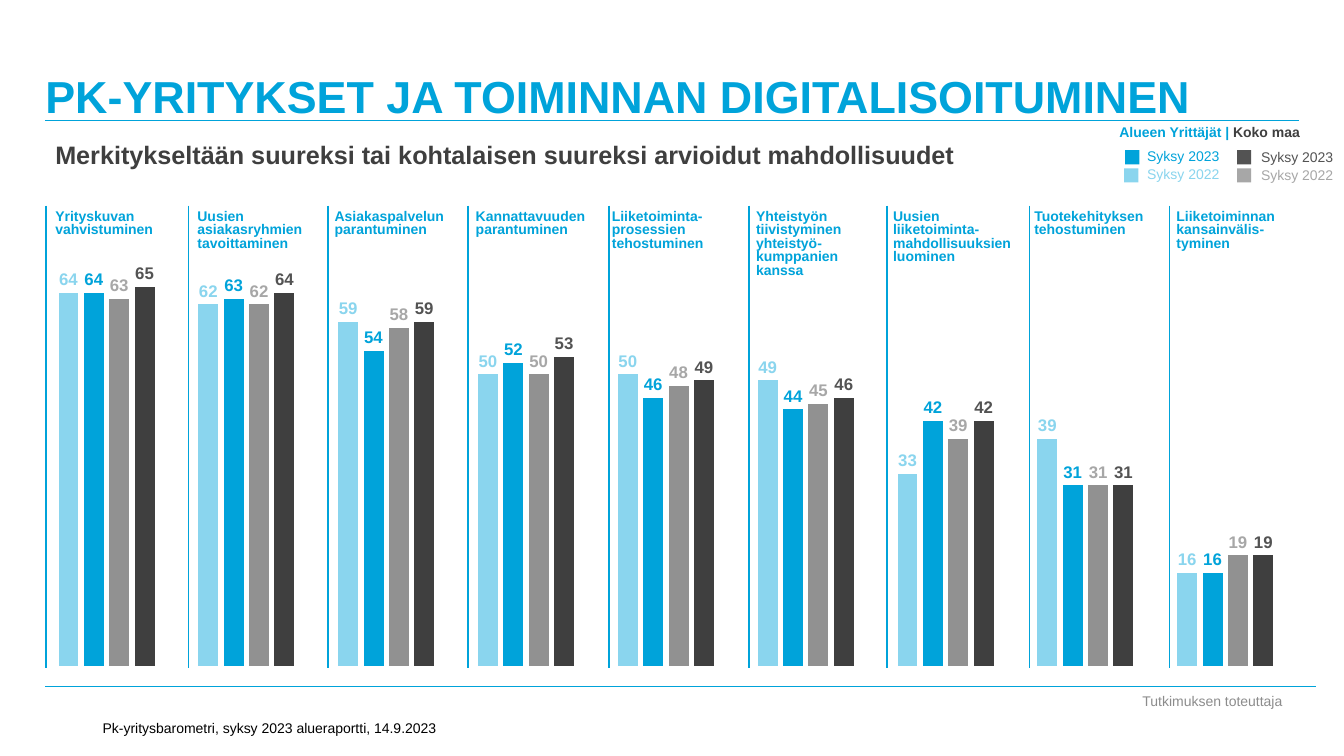
from pptx import Presentation
from pptx.chart.data import CategoryChartData
from pptx.dml.color import RGBColor
from pptx.enum.chart import XL_CHART_TYPE, XL_LABEL_POSITION
from pptx.enum.shapes import MSO_CONNECTOR, MSO_SHAPE
from pptx.enum.text import MSO_ANCHOR, MSO_AUTO_SIZE, PP_ALIGN
from pptx.oxml import parse_xml
from pptx.oxml.ns import nsdecls, qn
from pptx.util import Inches, Pt
from lxml.etree import SubElement

BLUE, LIGHT_BLUE, DARK = "00A3DA", "8AD5EE", "3F3F3F"
LEGEND_DARK, LEGEND_GREY = "535353", "A7A7A7"

TITLE = "PK-YRITYKSET JA TOIMINNAN DIGITALISOITUMINEN"
SUBTITLE = "Merkitykseltään suureksi tai kohtalaisen suureksi arvioidut mahdollisuudet"
SOURCE = "Pk-yritysbarometri, syksy 2023 alueraportti, 14.9.2023"
PROVIDER = "Tutkimuksen toteuttaja"
AREAS = [("Alueen Yrittäjät | ", BLUE), ("Koko maa", DARK)]

TOPICS = [
    ("Yrityskuvan vahvistuminen", 0.45, 0.46),
    ("Uusien asiakasryhmien tavoittaminen", 1.86, 1.87),
    ("Asiakaspalvelun parantuminen", 3.22, 3.25),
    ("Kannattavuuden parantuminen", 4.62, 4.64),
    ("Liiketoiminta-prosessien tehostuminen", 5.97, 6.04),
    ("Yhteistyön tiivistyminen yhteistyö-kumppanien kanssa", 7.4, 7.43),
    ("Uusien liiketoiminta-mahdollisuuksien luominen", 8.76, 8.8),
    ("Tuotekehityksen tehostuminen", 10.16, 10.21),
    ("Liiketoiminnan kansainvälis-tyminen", 11.57, 11.6),
]
SERIES = [
    ((64, 62, 59, 50, 50, 49, 33, 39, 16), LIGHT_BLUE, LIGHT_BLUE),
    ((64, 63, 54, 52, 46, 44, 42, 31, 16), BLUE, BLUE),
    ((63, 62, 58, 50, 48, 45, 39, 31, 19), "919191", LEGEND_GREY),
    ((65, 64, 59, 53, 49, 46, 42, 31, 19), DARK, LEGEND_DARK),
]
LEGEND = [
    ("Syksy 2023", BLUE, 11.16, 1.49, 11.28, 1.41),
    ("Syksy 2022", LIGHT_BLUE, 11.15, 1.67, 11.28, 1.59),
    ("Syksy 2023", LEGEND_DARK, 12.27, 1.49, 12.41, 1.42),
    ("Syksy 2022", LEGEND_GREY, 12.27, 1.67, 12.41, 1.6),
]
RULES = [(0.45, 12.88, 1.2), (0.45, 13.05, 6.81)]
PLOT_AREA = {"x": 0.012, "y": 0.097, "w": 0.976, "h": 0.879}


def color(value):
    return RGBColor.from_string(value)


def set_font(font, size, value, bold=False):
    settings = {"name": "Arial", "size": Pt(size), "bold": bold}
    for name, setting in settings.items():
        setattr(font, name, setting)
    font.color.rgb = color(value)


def write(frame, runs, size, bold=False, paragraph_format=None, **frame_format):
    for name, setting in frame_format.items():
        setattr(frame, name, setting)
    paragraph = frame.paragraphs[0]
    for name, setting in (paragraph_format or {}).items():
        setattr(paragraph, name, setting)
    for text, value in runs:
        run = paragraph.add_run()
        run.text = text
        set_font(run.font, size, value, bold)


def add_text(slide, box, runs, size=10, bold=False, paragraph_format=None, **frame_format):
    shape = slide.shapes.add_textbox(*map(Inches, box))
    options = {"word_wrap": True, **frame_format}
    write(shape.text_frame, runs, size, bold, paragraph_format, **options)


def add_line(slide, start, end, width):
    line = slide.shapes.add_connector(
        MSO_CONNECTOR.STRAIGHT, *map(Inches, (*start, *end)))
    line.line.color.rgb = color(BLUE)
    line.line.width = Pt(width)
    SubElement(line._element.spPr, qn("a:effectLst"))


def add_bars(slide):
    data = CategoryChartData(number_format="#,##0")
    data.categories = [str(number) for number in range(1, len(TOPICS) + 1)]
    for number, (values, _, _) in enumerate(SERIES, 1):
        data.add_series(f"Series {number}", values)
    chart = slide.shapes.add_chart(
        XL_CHART_TYPE.COLUMN_CLUSTERED,
        *map(Inches, (0.21, 2.11, 12.79, 4.61)), data).chart
    set_font(chart.font, 10, "000000")
    chart.has_legend = False
    chart.has_title = False
    chart.value_axis.minimum_scale = 0
    chart.value_axis.maximum_scale = 70
    chart.value_axis.has_major_gridlines = False
    for axis in (chart.category_axis, chart.value_axis):
        axis.visible = False
    plot = chart.plots[0]
    for name, setting in {"gap_width": 219, "overlap": -27, "vary_by_categories": False}.items():
        setattr(plot, name, setting)
    for series, (_, fill, label_color) in zip(plot.series, SERIES):
        series.format.fill.solid()
        series.format.fill.fore_color.rgb = color(fill)
        labels = series.data_labels
        label_format = {
            "show_value": True,
            "number_format": "#,##0",
            "number_format_is_linked": False,
            "position": XL_LABEL_POSITION.OUTSIDE_END,
        }
        for name, setting in label_format.items():
            setattr(labels, name, setting)
        set_font(labels.font, 12, label_color, True)
    place_plot_area(chart)


def place_plot_area(chart):
    modes = '<c:layoutTarget val="inner"/><c:xMode val="edge"/><c:yMode val="edge"/>'
    sizes = "".join(f'<c:{name} val="{value}"/>' for name, value in PLOT_AREA.items())
    layout = parse_xml(
        f"<c:layout {nsdecls('c')}><c:manualLayout>{modes}{sizes}</c:manualLayout></c:layout>")
    plot_area = chart._chartSpace.chart.plotArea
    for old_layout in plot_area.findall(qn("c:layout")):
        plot_area.remove(old_layout)
    plot_area.insert(0, layout)


def add_legend(slide):
    for text, value, square_left, square_top, text_left, text_top in LEGEND:
        square = slide.shapes.add_shape(
            MSO_SHAPE.RECTANGLE, *map(Inches, (square_left, square_top, 0.14, 0.14)))
        square.shadow.inherit = False
        square.fill.solid()
        square.fill.fore_color.rgb = color(value)
        square.line.fill.background()
        add_text(slide, (text_left, text_top, 0.93, 0.27), [(text, value)], word_wrap=False)


def main():
    presentation = Presentation()
    presentation.slide_width = Inches(13.33)
    presentation.slide_height = Inches(7.5)
    slide = presentation.slides.add_slide(presentation.slide_layouts[5])

    title = slide.shapes.title
    box = {"left": 0.45, "top": 0, "width": 12.3, "height": 1.22}
    for name, length in box.items():
        setattr(title, name, Inches(length))
    margins = {f"margin_{side}": 0 for side in ("left", "top", "right", "bottom")}
    write(title.text_frame, [(TITLE, BLUE)], 32, True, {"alignment": PP_ALIGN.LEFT},
          vertical_anchor=MSO_ANCHOR.BOTTOM, auto_size=MSO_AUTO_SIZE.NONE, **margins)

    add_bars(slide)
    for left, right, top in RULES:
        add_line(slide, (left, top), (right, top), 0.75)
    for topic, label_left, divider_left in TOPICS:
        add_line(slide, (divider_left, 2.04), (divider_left, 6.63), 1.25)
        add_text(slide, (label_left, 2.04, 1.42, 0.37), [(topic, BLUE)], bold=True,
                 paragraph_format={"line_spacing": 0.8})

    add_text(slide, (0.45, 1.39, 10.43, 0.34), [(SUBTITLE, DARK)], 18, True,
             {"line_spacing": 0.8})
    add_text(slide, (8.13, 1.18, 4.86, 0.27), AREAS, bold=True,
             paragraph_format={"alignment": PP_ALIGN.RIGHT})
    add_legend(slide)
    add_text(slide, (11.16, 6.82, 1.73, 0.26), [(PROVIDER, "8C8C8C")],
             paragraph_format={"alignment": PP_ALIGN.CENTER},
             vertical_anchor=MSO_ANCHOR.MIDDLE)
    add_text(slide, (0.92, 7, 4.17, 0.35), [(SOURCE, "000000")],
             vertical_anchor=MSO_ANCHOR.BOTTOM)
    presentation.save("out.pptx")


if __name__ == "__main__":
    main()
